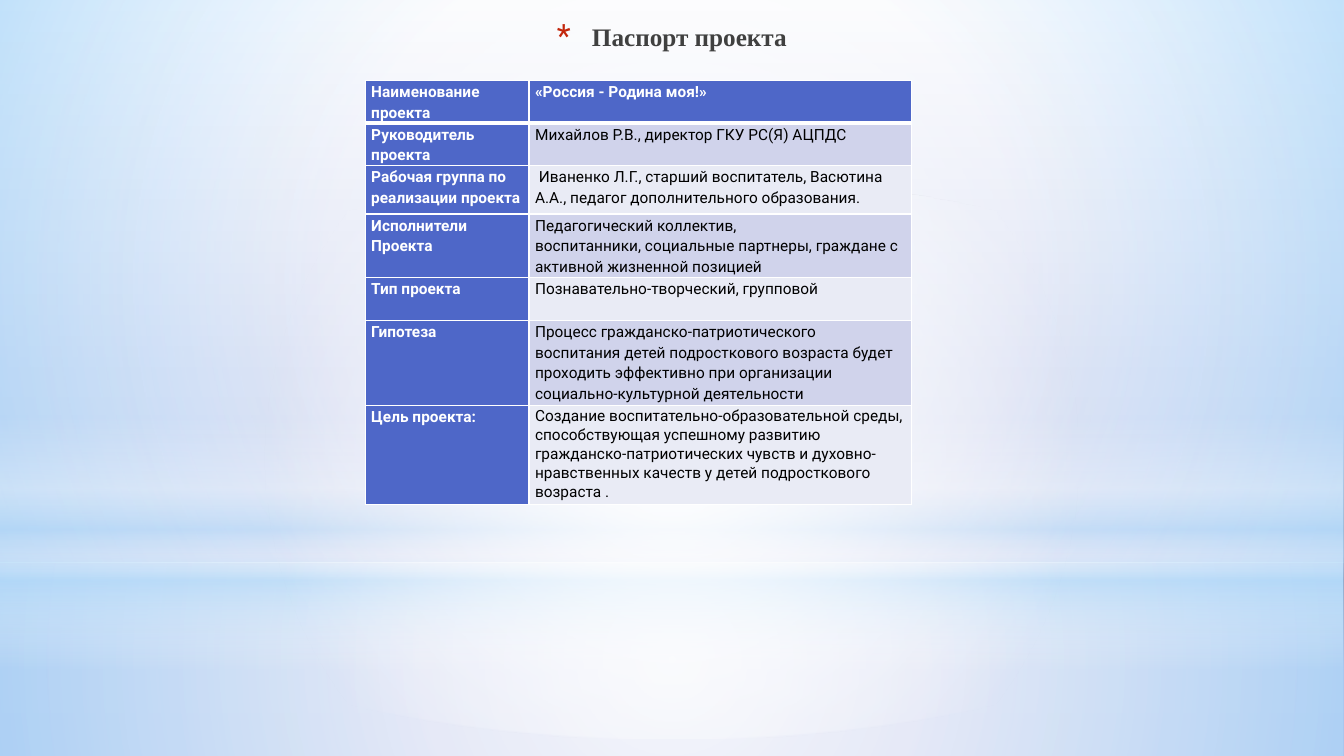
"""Builds the project passport slide: a title and a two-column table on a soft sky."""
from lxml import etree
from pptx import Presentation
from pptx.dml.color import RGBColor
from pptx.enum import shapes, text
from pptx.oxml.ns import qn
from pptx.util import Pt

COLORS = {
    "white": "FFFFFF", "black": "000000", "title": "404040", "star": "C3260C",
    "label": "4E67C8", "band_dark": "D0D3EB", "band_light": "E9EBF5", "sky": "B4DCFA",
    "base_1": "F6F7FC", "base_2": "AFBBE6", "base_3": "9AA8E0", "base_4": "93A2DD",
}
SLIDE_WIDTH, SLIDE_HEIGHT = 960, 540
TITLE = "Паспорт проекта"
TITLE_PLACE = (66, 10.8, 828, 31)
TABLE_LEFT, TABLE_TOP = 260.9, 57.6
COLUMN_WIDTHS = (117, 273.3)
ROWS = [
    (30.2, "Наименование проекта", ["«Россия - Родина моя!»"]),
    (29.8, "Руководитель проекта", ["Михайлов Р.В., директор ГКУ РС(Я) АЦПДС"]),
    (34.6, "Рабочая группа по реализации проекта",
     [" Иваненко Л.Г., старший воспитатель, Васютина А.А., педагог дополнительного образования."]),
    (45.2, "Исполнители Проекта",
     ["Педагогический коллектив,",
      "воспитанники, социальные партнеры, граждане с активной жизненной позицией"]),
    (30.6, "Тип проекта", ["Познавательно-творческий, групповой"]),
    (60.5, "Гипотеза",
     ["Процесс гражданско-патриотического воспитания детей подросткового возраста будет "
      "проходить эффективно при организации социально-культурной деятельности"]),
    (68.4, "Цель проекта:",
     ["Создание воспитательно-образовательной среды, способствующая успешному развитию "
      "гражданско-патриотических чувств и духовно-нравственных качеств у детей "
      "подросткового возраста ."]),
]
BASE_STOPS = [(0, "base_1", 100), (50, "base_2", 100), (77, "base_3", 100), (100, "base_4", 100)]
RECTANGLE, OVAL = shapes.MSO_SHAPE.RECTANGLE, shapes.MSO_SHAPE.OVAL
SKY_LAYERS = [
    (RECTANGLE, 401.8, 138.2, True, [(0, "white", 91), (37, "white", 76), (100, "sky", 79)]),
    (RECTANGLE, 0, 401.8, True, [(0, "white", 89), (48, "white", 62), (100, "sky", 79)]),
    (RECTANGLE, 296.6, 180, False, [(0, "white", 0), (29, "white", 30), (45, "sky", 40),
                                    (55, "white", 26), (65, "sky", 60), (100, "white", 0)]),
    (OVAL, 126, 401.8, True, [(0, "white", 100), (56, "white", 0)]),
]


def color(name):
    return RGBColor.from_string(COLORS[name])


def add_element(parent, tag, **attributes):
    values = {key: str(value) for key, value in attributes.items()}
    return etree.SubElement(parent, qn(tag), values)


def set_gradient(properties, stops, radial=False):
    gradient = etree.Element(qn("a:gradFill"), rotWithShape="1")
    stop_list = add_element(gradient, "a:gsLst")
    for position, name, opacity in stops:
        stop = add_element(stop_list, "a:gs", pos=position * 1000)
        shade = add_element(stop, "a:srgbClr", val=COLORS[name])
        if opacity < 100:
            add_element(shade, "a:alpha", val=opacity * 1000)
    if radial:
        circle = add_element(gradient, "a:path", path="circle")
        add_element(circle, "a:fillToRect", l=50000, t=50000, r=50000, b=50000)
    else:
        add_element(gradient, "a:lin", ang=5400000, scaled=0)
    properties.replace(properties.find(qn("a:noFill")), gradient)


def write(para, words, *, size, font, ink, bold=False, spacing=1.0, align=None):
    span = para.add_run()
    span.text = words
    span.font.size, span.font.name, span.font.bold = Pt(size), font, bold
    span.font.color.rgb = color(ink)
    para.line_spacing = spacing
    para.alignment = align


def add_star_bullet(para):
    properties = para._p.get_or_add_pPr()
    properties.set("marL", str(Pt(25)))
    properties.set("indent", str(-Pt(25)))
    bullet_color = add_element(properties, "a:buClr")
    add_element(bullet_color, "a:srgbClr", val=COLORS["star"])
    add_element(properties, "a:buSzPct", val=128000)
    add_element(properties, "a:buFont", typeface="Roboto")
    add_element(properties, "a:buChar", char="*")


def set_borders(cell, **widths):
    properties = cell._tc.get_or_add_tcPr()
    for index, side in enumerate("LRTB"):
        line = etree.Element(qn(f"a:ln{side}"), w=str(Pt(widths.get(side, 1))))
        fill = add_element(line, "a:solidFill")
        add_element(fill, "a:srgbClr", val=COLORS["white"])
        properties.insert(index, line)


def add_sky(page):
    page.background.fill.background()
    set_gradient(page._element.cSld.bg.bgPr, BASE_STOPS)
    for kind, top, height, radial, stops in SKY_LAYERS:
        layer = page.shapes.add_shape(kind, 0, Pt(top), Pt(SLIDE_WIDTH), Pt(height))
        layer.shadow.inherit = False
        layer.line.fill.background()
        layer.fill.background()
        set_gradient(layer._element.spPr, stops, radial)


def add_title(page):
    box = page.shapes.add_textbox(*map(Pt, TITLE_PLACE))
    frame = box.text_frame
    frame.word_wrap = True
    frame.vertical_anchor = text.MSO_ANCHOR.MIDDLE
    para = frame.paragraphs[0]
    write(para, TITLE, size=18, font="Times New Roman", ink="title", bold=True,
          align=text.PP_ALIGN.CENTER)
    add_star_bullet(para)


def add_passport(page):
    heights = [row[0] for row in ROWS]
    frame = page.shapes.add_table(len(ROWS), len(COLUMN_WIDTHS), Pt(TABLE_LEFT), Pt(TABLE_TOP),
                                  Pt(sum(COLUMN_WIDTHS)), Pt(sum(heights)))
    table = frame.table
    for column, width in zip(table.columns, COLUMN_WIDTHS):
        column.width = Pt(width)
    for index, (height, label, lines) in enumerate(ROWS):
        table.rows[index].height = Pt(height)
        band = "band_dark" if index % 2 else "band_light"
        spacing = 1.07 if index == len(ROWS) - 1 else 1.15
        for position, words in enumerate(([label], lines)):
            cell = table.cell(index, position)
            strong = index == 0 or position == 0
            cell.fill.solid()
            cell.fill.fore_color.rgb = color("label" if strong else band)
            cell.margin_left = cell.margin_right = Pt(4.3)
            cell.margin_top = cell.margin_bottom = 0
            set_borders(cell, T=3 if index == 1 else 1, B=3 if index == 0 else 1)
            for number, line in enumerate(words):
                paras = cell.text_frame
                para = paras.add_paragraph() if number else paras.paragraphs[0]
                write(para, line, size=11, font="Roboto", bold=strong,
                      ink="white" if strong else "black",
                      spacing=spacing if position else 1.15)


def main():
    deck = Presentation()
    deck.slide_width, deck.slide_height = Pt(SLIDE_WIDTH), Pt(SLIDE_HEIGHT)
    page = deck.slides.add_slide(deck.slide_layouts[6])
    add_sky(page)
    add_title(page)
    add_passport(page)
    deck.save("out.pptx")


if __name__ == "__main__":
    main()
